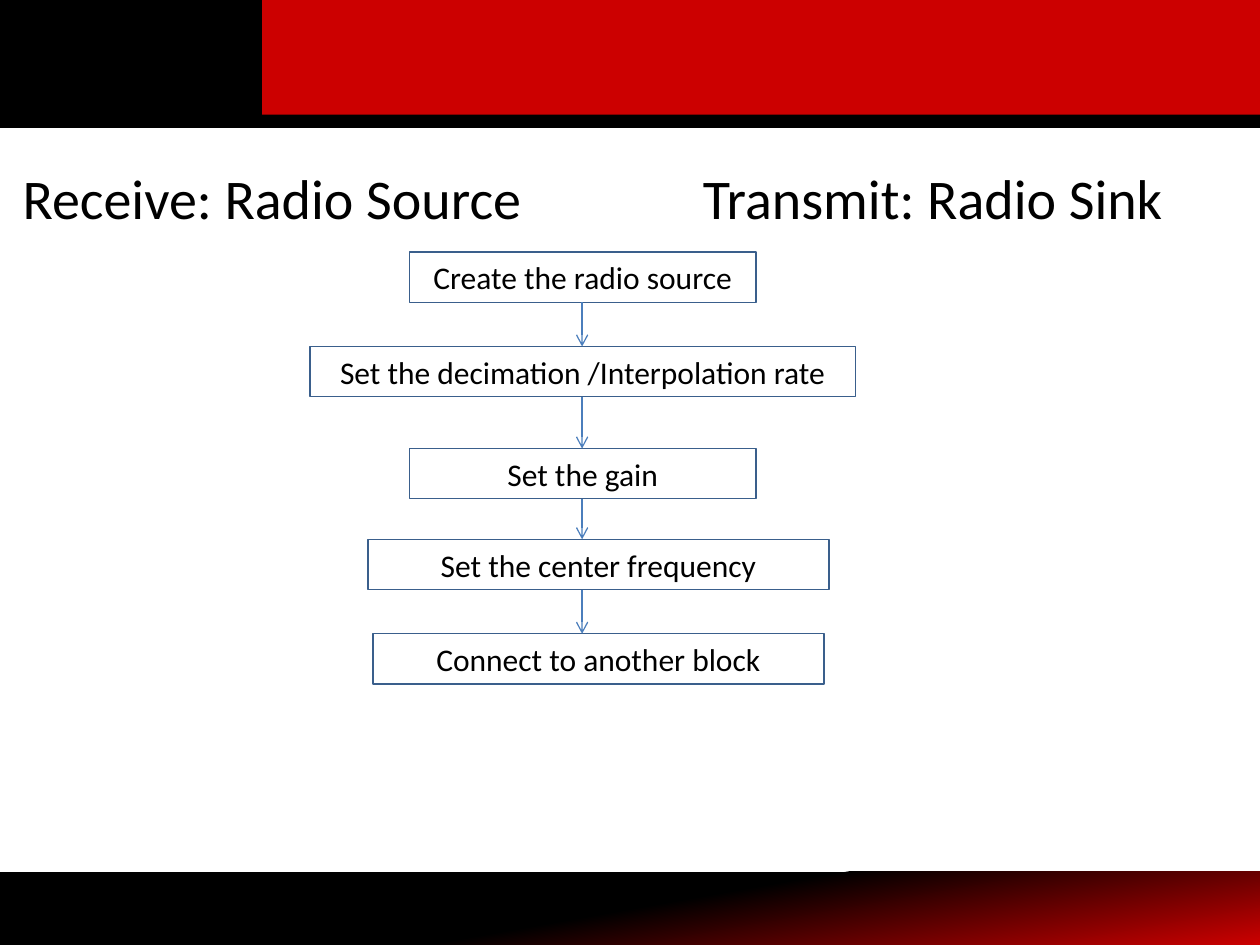
from itertools import pairwise
from lxml.etree import SubElement
from pptx import Presentation
from pptx.dml.color import RGBColor
from pptx.enum.shapes import MSO_CONNECTOR, MSO_SHAPE
from pptx.enum.text import MSO_ANCHOR, PP_ALIGN
from pptx.oxml.ns import qn
from pptx.util import Inches, Pt

STEPS = [
    ("Create the radio source", 3.25, 2, 2.75),
    ("Set the decimation /Interpolation rate", 2.46, 2.75, 4.33),
    ("Set the gain", 3.25, 3.56, 2.75),
    ("Set the center frequency", 2.92, 4.28, 3.66),
    ("Connect to another block", 2.96, 5.03, 3.58),
]
HIGH = 0.4
AXIS = 4.62


def color(code):
    """Turn a hex string into a colour."""
    return RGBColor.from_string(code)


def write(para, text, size):
    """Add one run of black Calibri text."""
    run = para.add_run()
    run.text = text
    run.font.name = "Calibri"
    run.font.size = Pt(size)
    run.font.color.rgb = color("000000")


def block(slide, left, top, width, height, fill=None, line=None, weight=0.75):
    """Add a flat rectangle with optional fill and line."""
    shape = slide.shapes.add_shape(
        MSO_SHAPE.RECTANGLE, Inches(left), Inches(top), Inches(width), Inches(height)
    )
    shape.shadow.inherit = False
    if fill:
        shape.fill.solid()
        shape.fill.fore_color.rgb = color(fill)
    else:
        shape.fill.background()
    if line:
        shape.line.color.rgb = color(line)
        shape.line.width = Pt(weight)
    else:
        shape.line.fill.background()
    return shape


def bands(slide):
    """Draw the header blocks and the shaded footer."""
    foot = block(slide, 0, 6.92, 10, 0.58)
    foot.fill.gradient()
    foot.fill.gradient_angle = 280
    for stop, place, code in zip(
        foot.fill.gradient_stops, (0.5, 1), ("000000", "CC0000")
    ):
        stop.position = place
        stop.color.rgb = color(code)
    block(slide, 0, 0, 10, 1, "000000", "000000", 2)
    block(slide, 2.08, -0.01, 7.92, 0.92, "CC0000")


def heading(shape, text, left, width, height):
    """Place a shape in the heading row and fill it."""
    shape.left, shape.top = Inches(left), Inches(1.25)
    shape.width, shape.height = Inches(width), Inches(height)
    shape.text_frame.word_wrap = True
    para = shape.text_frame.paragraphs[0]
    props = para._p.get_or_add_pPr()
    props.set("marL", "0")
    props.set("indent", "0")
    SubElement(props, qn("a:buNone"))
    para.space_before = Pt(0)
    write(para, text, 32)


def titles(slide):
    """Add the receive and transmit headings side by side."""
    title = slide.shapes.title.element
    title.getparent().remove(title)
    heading(slide.placeholders[1], "Receive: Radio Source", 0.08, 5.4, 5.45)
    sink = slide.shapes.add_textbox(0, 0, 0, 0)
    heading(sink, "Transmit: Radio Sink", 5.48, 4.52, 0.64)


def step(slide, text, left, top, width):
    """Add one outlined step of the flow."""
    frame = block(slide, left, top, width, HIGH, line="3A5F8C").text_frame
    frame.word_wrap = True
    frame.vertical_anchor = MSO_ANCHOR.MIDDLE
    para = frame.paragraphs[0]
    para.alignment = PP_ALIGN.CENTER
    write(para, text, 18)


def arrow(slide, start, end):
    """Add an arrow down the axis of the flow."""
    link = slide.shapes.add_connector(
        MSO_CONNECTOR.STRAIGHT, Inches(AXIS), Inches(start), Inches(AXIS), Inches(end)
    )
    link.line.color.rgb = color("4B7EBC")
    link.line.width = Pt(0.75)
    SubElement(link.line._get_or_add_ln(), qn("a:tailEnd"), type="arrow")
    SubElement(link.element.spPr, qn("a:effectLst"))


def main():
    """Build the slide and save it."""
    deck = Presentation()
    deck.slide_width, deck.slide_height = Inches(10), Inches(7.5)
    slide = deck.slides.add_slide(deck.slide_layouts[1])
    bands(slide)
    titles(slide)
    for item in STEPS:
        step(slide, *item)
    for (_, _, top, _), (_, _, below, _) in pairwise(STEPS):
        arrow(slide, top + HIGH, below)
    deck.save("out.pptx")


if __name__ == "__main__":
    main()
